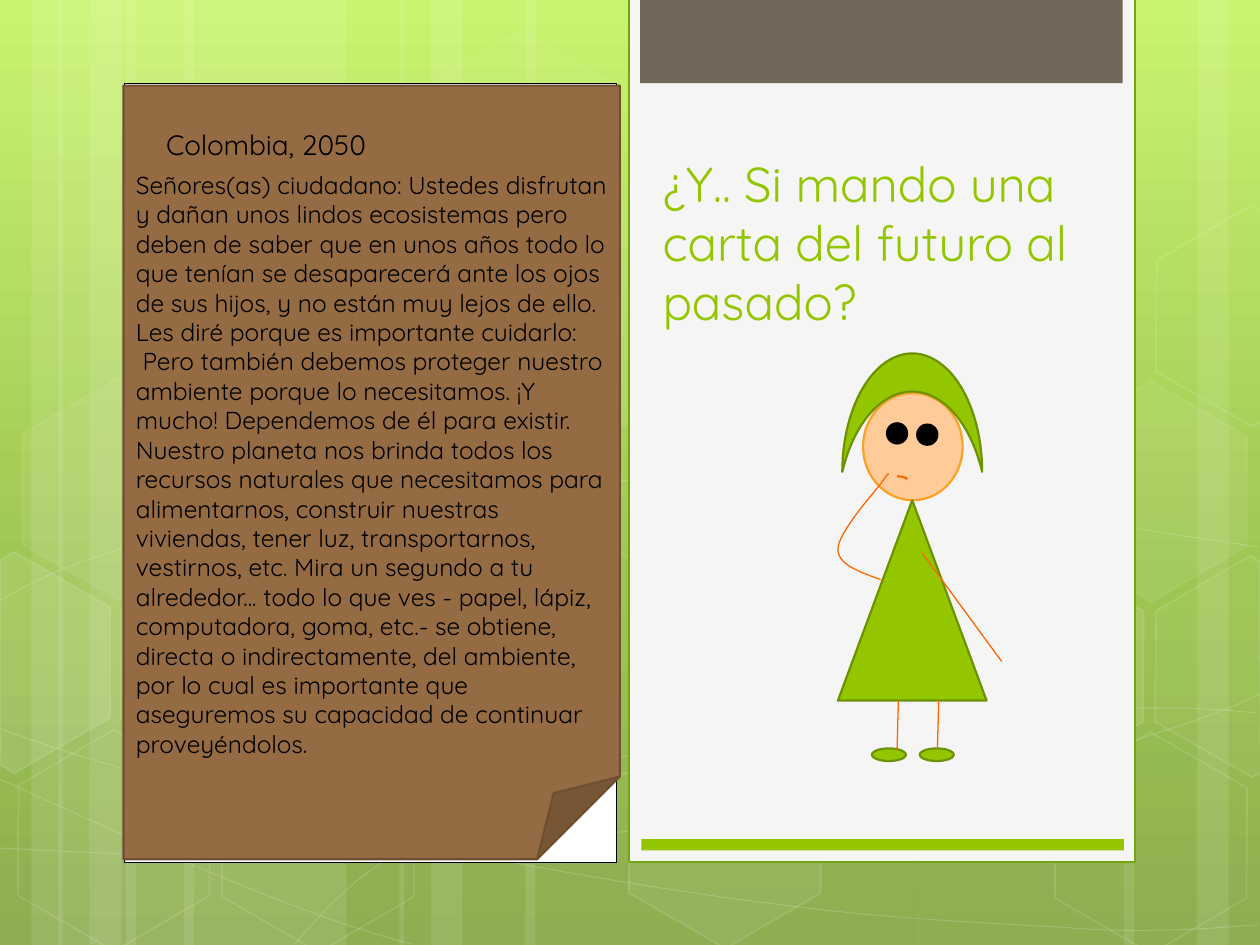
from copy import deepcopy
from math import cos, radians, sin

from lxml.etree import SubElement
from pptx import Presentation
from pptx.dml.color import RGBColor
from pptx.enum.shapes import MSO_CONNECTOR, MSO_SHAPE
from pptx.enum.text import MSO_ANCHOR
from pptx.oxml.ns import qn
from pptx.shapes.connector import Connector
from pptx.util import Inches, Pt

WHITE, BLACK = "FFFFFF", "000000"
GREEN, DARK_GREEN, SKIN_LINE = "94C600", "6D9200", "FF6700"
TILT = 30
rgb = RGBColor.from_string


def style(shape, fill=None, line=None, width=1.25, fill_alpha=100, line_alpha=100):
    """Paint fill and line (None means none, alpha in percent), without shadow."""
    paints = [(shape.line.fill, line, line_alpha)]
    if not isinstance(shape, Connector):
        paints.append((shape.fill, fill, fill_alpha))
        shape.shadow.inherit = False
    for paint, color, alpha in paints:
        if color is None:
            paint.background()
            continue
        paint.solid()
        paint.fore_color.rgb = rgb(color)
        if alpha < 100:
            color_element = paint._xPr.find(qn("a:solidFill"))[0]
            SubElement(color_element, qn("a:alpha")).set("val", str(alpha * 1000))
    if line:
        shape.line.width = Pt(width)
    if isinstance(shape, Connector):
        SubElement(shape._element.spPr, qn("a:effectLst"))


def trace(points, curved=True):
    """Draw a chain of cubic Bezier curves, or a closed polygon if not curved."""
    corners = [(Inches(x), Inches(y)) for x, y in points]
    builder = shapes.build_freeform(*corners[0])
    builder.add_line_segments(corners[1:], close=not curved)
    outline = builder.convert_to_shape()
    if curved:
        segments = list(outline._element.iter(qn("a:lnTo")))
        for i in range(0, len(segments), 3):
            curve = SubElement(segments[i].getparent(), qn("a:cubicBezTo"))
            for segment in segments[i:i + 3]:
                curve.append(segment[0])
                segment.getparent().remove(segment)
    return outline


prs = Presentation()
prs.slide_width, prs.slide_height = Inches(10), Inches(7.5)
slide = prs.slides.add_slide(prs.slide_layouts[6])
shapes = slide.shapes

# Background gradient, top to bottom
backdrop = slide.background.fill
backdrop.gradient()
backdrop.gradient_angle = 270
stop_list = backdrop._xPr.find(qn("a:gradFill")).find(qn("a:gsLst"))
stop_list.append(deepcopy(stop_list[-1]))
for stop, (position, color) in zip(
        backdrop.gradient_stops, [(0, "C3F35F"), (0.62, "93BF3F"), (1, "81A53E")]):
    stop.position = position
    stop.color.rgb = rgb(color)

# Translucent vertical stripes
for left, width, turn in [
        (1, 1.75, 0), (0, 0.5, 0), (0.25, 0.83, 0), (1.46, 1.75, 0), (0.46, 0.5, 0), (0.71, 0.83, 0),
        (7.25, 1.75, 180), (9.5, 0.5, 180), (8.92, 0.83, 180),
        (4.17, 3.08, 0), (3.17, 0.5, 0), (3.42, 0.83, 0)]:
    stripe = shapes.add_shape(MSO_SHAPE.RECTANGLE, Inches(left), 0, Inches(width), Inches(7.5))
    stripe.rotation = turn
    style(stripe, WHITE, fill_alpha=10)

# Thin sweeping waves
waves = [
    [(-0.01, 6.73), (0.53, 6.76), (1.07, 6.79), (1.82, 6.78), (2.57, 6.77), (3.49, 6.75), (4.49, 6.65),
     (5.5, 6.55), (6.92, 6.36), (7.83, 6.17), (8.75, 5.98), (9.68, 5.68), (9.99, 5.51)],
    [(-0.01, 4.77), (0.27, 4.61), (0.56, 4.46), (1.13, 4.31), (1.7, 4.16), (2.5, 3.94), (3.39, 3.87),
     (4.28, 3.8), (5.35, 3.79), (6.45, 3.87), (7.55, 3.95), (9.39, 4.26), (9.99, 4.34)],
    [(-0.03, 6.17), (1.18, 6.72), (2.39, 7.27), (3.26, 7.49)],
    [(-0.01, 5.78), (0.3, 5.89), (0.61, 6), (1.19, 6.16), (1.78, 6.31), (2.65, 6.56), (3.48, 6.73),
     (4.31, 6.9), (5.37, 7.08), (6.19, 7.18), (7.02, 7.29), (7.91, 7.33), (8.44, 7.36),
     (8.97, 7.4), (9.11, 7.38), (9.36, 7.38), (9.62, 7.37), (9.8, 7.35), (9.99, 7.34)],
    [(2.34, 7.49), (2.52, 7.29), (2.69, 7.09), (2.94, 6.91), (3.18, 6.73), (3.51, 6.53), (3.79, 6.39),
     (4.07, 6.25), (4.24, 6.19), (4.61, 6.09), (4.98, 5.99), (5.65, 5.85), (6, 5.78),
     (6.35, 5.71), (6.4, 5.71), (6.71, 5.69), (7.02, 5.66), (7.51, 5.63), (7.86, 5.62),
     (8.2, 5.61), (8.78, 5.62), (8.78, 5.62), (9, 5.62), (9.22, 5.62), (9.44, 5.62),
     (9.63, 5.63), (9.79, 5.64), (9.88, 5.65), (9.97, 5.66), (9.94, 5.65), (9.97, 5.66)],
]
for wave in waves:
    style(trace(wave), line=WHITE, width=0.5, line_alpha=20)

# Honeycomb: left, top, fill alpha (0 is hollow), line alpha
for left, top, fill_alpha, line_alpha in [
        (3.28, 3.13, 10, 12), (4.07, 4.51, 0, 12), (4.08, 1.74, 7, 8), (3.26, 0.36, 4, 8),
        (4.88, 5.89, 6, 12), (0.03, 5.91, 0, 12), (0.06, 3.12, 7, 8), (0.85, 4.51, 0, 12),
        (1.65, 5.92, 0, 12), (0.87, 1.71, 0, 12), (7.44, 4.53, 10, 12), (8.26, 5.93, 0, 12),
        (8.26, 3.14, 7, 8)]:
    cell = shapes.add_shape(MSO_SHAPE.HEXAGON, Inches(left), Inches(top), Inches(1.75), Inches(1.52))
    cell.adjustments[0] = 0.285
    cell.rotation = TILT
    style(cell, WHITE if fill_alpha else None, WHITE, 1, fill_alpha, line_alpha)

# Cells cut by the slide edges: turned back about their centre, then tilted like the others
for (center_x, center_y), corners, fill_alpha in [
        ((0.27, 5.35),
         [(0, 4.45), (0.11, 4.38), (0.87, 4.82), (0.87, 5.7), (0.11, 6.14), (0, 6.07)], 10),
        ((9.76, 5.2),
         [(9.18, 4.85), (9.93, 4.41), (10, 4.46), (10.01, 6.13), (9.94, 6.17), (9.17, 5.73)], 4),
        ((9.76, 2.41),
         [(9.18, 2.07), (9.93, 1.63), (10.01, 1.68), (10.01, 3.35), (9.94, 3.39), (9.17, 2.95)], 0)]:
    c, s = cos(radians(TILT)), sin(radians(TILT))
    upright = [(center_x + (x - center_x) * c + (y - center_y) * s,
                center_y - (x - center_x) * s + (y - center_y) * c) for x, y in corners]
    cut_cell = trace(upright, curved=False)
    cut_cell.rotation = TILT
    style(cut_cell, WHITE if fill_alpha else None, WHITE, 1, fill_alpha, 12)

# Title card, its top and bottom bands, and the sheet behind the letter
for left, top, width, height, fill, line, weight in [
        (4.99, -0.02, 4.02, 6.86, "F5F5F5", "74A510", 1.25),
        (5.08, -0.02, 3.83, 0.68, "71685A", None, 0),
        (0.99, 0.66, 3.9, 6.18, WHITE, BLACK, 0.25),
        (5.09, 6.66, 3.83, 0.09, GREEN, None, 0)]:
    panel = shapes.add_shape(
        MSO_SHAPE.RECTANGLE, Inches(left), Inches(top), Inches(width), Inches(height))
    style(panel, fill, line, weight)

# Thinking girl and the brown letter
figure = [
    (MSO_SHAPE.OVAL, 6.85, 3.12, 0.79, 0.85, "FFCC99", "FEA022"),  # face
    (MSO_SHAPE.ISOSCELES_TRIANGLE, 6.65, 3.97, 1.18, 1.59, GREEN, DARK_GREEN),  # dress
    (MSO_SHAPE.ARC, 7.04, 3.78, 0.16, 0.05, None, SKIN_LINE),  # mouth
    (MSO_SHAPE.OVAL, 7.04, 3.36, 0.16, 0.16, BLACK, BLACK),  # eyes
    (MSO_SHAPE.OVAL, 7.28, 3.37, 0.16, 0.16, BLACK, BLACK),
    (MSO_SHAPE.MOON, 6.77, 2.72, 0.94, 1.11, GREEN, DARK_GREEN),  # hair
    (MSO_SHAPE.OVAL, 6.92, 5.94, 0.27, 0.1, GREEN, DARK_GREEN),  # feet
    (MSO_SHAPE.OVAL, 7.3, 5.94, 0.27, 0.1, GREEN, DARK_GREEN),
    (MSO_SHAPE.FOLDED_CORNER, 0.98, 0.68, 3.94, 6.14, "956B43", "6E4F32"),  # letter
]
for kind, left, top, width, height, fill, line in figure:
    part = shapes.add_shape(kind, Inches(left), Inches(top), Inches(width), Inches(height))
    style(part, fill, line)
    if kind == MSO_SHAPE.MOON:
        part.rotation = 90
        part.adjustments[0] = 0.322
bent_arm = [(6.99, 4.6), (6.82, 4.54), (6.65, 4.48), (6.65, 4.36), (6.65, 4.23), (6.92, 3.93),
            (6.99, 3.84), (7.06, 3.74), (7.05, 3.76), (7.05, 3.77)]
style(trace(bent_arm), line=SKIN_LINE, width=0.75)
for x1, y1, x2, y2 in [(7.32, 4.39, 7.95, 5.25), (7.45, 5.56, 7.44, 5.95), (7.13, 5.56, 7.12, 5.95)]:
    limb = shapes.add_connector(
        MSO_CONNECTOR.STRAIGHT, Inches(x1), Inches(y1), Inches(x2), Inches(y2))
    style(limb, line=SKIN_LINE, width=0.75)

# Title, letter heading and letter body
letter = [
    "Señores(as) ciudadano: Ustedes disfrutan y dañan unos lindos ecosistemas pero deben de saber "
    "que en unos años todo lo que tenían se desaparecerá ante los ojos de sus hijos, y no están muy "
    "lejos de ello.",
    "Les diré porque es importante cuidarlo:",
    " Pero también debemos proteger nuestro ambiente porque lo necesitamos. ¡Y mucho! Dependemos de "
    "él para existir. Nuestro planeta nos brinda todos los recursos naturales que necesitamos para "
    "alimentarnos, construir nuestras viviendas, tener luz, transportarnos, vestirnos, etc. Mira un "
    "segundo a tu alrededor... todo lo que ves - papel, lápiz, computadora, goma, etc.- se obtiene, "
    "directa o indirectamente, del ambiente, por lo cual es importante que aseguremos su capacidad "
    "de continuar proveyéndolos.",
]
for left, top, width, height, size, color, anchor, paragraphs in [
        (5.16, 1.07, 3.61, 1.6, 28, GREEN, MSO_ANCHOR.BOTTOM,
         ["¿Y.. Si mando una carta del futuro al pasado?"]),
        (1.22, 0.96, 2.54, 0.37, 16, BLACK, MSO_ANCHOR.TOP, ["Colombia, 2050"]),
        (0.98, 1.3, 3.94, 6.2, 14, BLACK, MSO_ANCHOR.TOP, letter)]:
    frame = shapes.add_textbox(Inches(left), Inches(top), Inches(width), Inches(height)).text_frame
    frame.word_wrap = True
    frame.vertical_anchor = anchor
    for number, words in enumerate(paragraphs):
        paragraph = frame.add_paragraph() if number else frame.paragraphs[0]
        run = paragraph.add_run()
        run.text = words
        run.font.name = "Quicksand"
        run.font.size = Pt(size)
        run.font.color.rgb = rgb(color)

prs.save("out.pptx")
